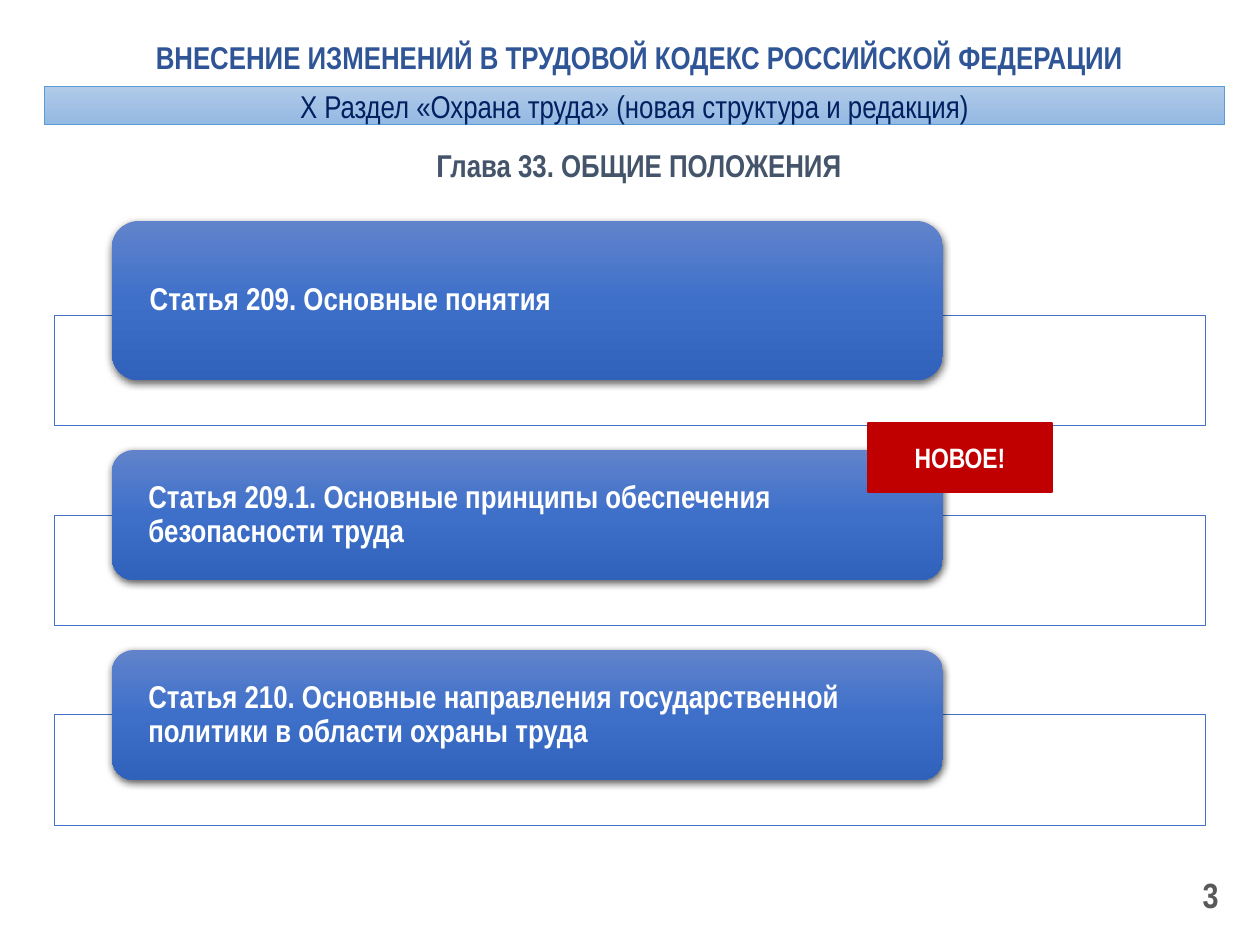
"""Builds the slide on chapter 33 of the labour code."""
from copy import deepcopy
from dataclasses import dataclass
from typing import NamedTuple, Optional

from lxml.etree import SubElement
from pptx import Presentation
from pptx.dml.color import RGBColor
from pptx.enum.shapes import MSO_SHAPE
from pptx.enum.text import MSO_ANCHOR, PP_ALIGN
from pptx.oxml.ns import qn
from pptx.util import Emu, Pt

EMU_PER_PX = 914400 / 126


@dataclass(frozen=True)
class Theme:
    font: str = "Arial Narrow"
    body_size: int = 18
    badge_size: int = 16
    number_size: int = 20
    title: str = "2F5597"
    chapter: str = "44546A"
    banner_text: str = "002060"
    banner_line: str = "5B9BD5"
    banner_fill: tuple = ("B1CBE9", "A3C1E5", "93B9E4")
    card_fill: tuple = ("6183CB", "3E70CA", "3062BB")
    frame_line: str = "4472C4"
    badge: str = "C00000"
    white: str = "FFFFFF"
    number: str = "595959"
    shadow: str = "000000"


THEME = Theme()


class Box(NamedTuple):
    left: int
    top: int
    width: int
    height: int


@dataclass(frozen=True)
class Label:
    text: str
    color: str
    size: int = THEME.body_size
    bold: bool = True
    align: PP_ALIGN = PP_ALIGN.CENTER


@dataclass(frozen=True)
class Article:
    text: str
    height: int


ARTICLES = (
    Article("Статья 209. Основные понятия", 159),
    Article("Статья 209.1. Основные принципы обеспечения безопасности труда", 130),
    Article("Статья 210. Основные направления государственной политики в области охраны труда", 130),
)
FIRST_CARD_BOTTOM = 380
ARTICLE_PITCH = 200
FRAME_OVERLAP = 65


def px(length: int) -> Emu:
    """Turn pixels into EMU."""
    return Emu(round(length * EMU_PER_PX))


def write(shape, label: Label) -> None:
    """Set and format the text of a shape."""
    frame = shape.text_frame
    frame.text = label.text
    frame.word_wrap = True
    frame.vertical_anchor = MSO_ANCHOR.MIDDLE
    paragraph = frame.paragraphs[0]
    paragraph.alignment = label.align
    font = paragraph.runs[0].font
    font.name = THEME.font
    font.size = Pt(label.size)
    font.bold = label.bold
    font.color.rgb = RGBColor.from_string(label.color)


def add_text(slide, box: Box, label: Label) -> None:
    """Add a text box with one line of text."""
    write(slide.shapes.add_textbox(*map(px, box)), label)


def add_panel(slide, kind: MSO_SHAPE, box: Box, fill: Optional[str] = None,
              line: Optional[str] = None, line_width: float = 0.5):
    """Add a preset shape with an optional solid fill and outline."""
    panel = slide.shapes.add_shape(kind, *map(px, box))
    panel.shadow.inherit = False
    if fill:
        panel.fill.solid()
        panel.fill.fore_color.rgb = RGBColor.from_string(fill)
    else:
        panel.fill.background()
    if line:
        panel.line.color.rgb = RGBColor.from_string(line)
        panel.line.width = Pt(line_width)
    else:
        panel.line.fill.background()
    return panel


def shade(panel, colors: tuple) -> None:
    """Fill a panel with a three-colour gradient from top to bottom."""
    panel.fill.gradient()
    panel.fill.gradient_angle = 270
    stop_list = panel.element.spPr.find(qn("a:gradFill")).find(qn("a:gsLst"))
    stop_list.append(deepcopy(stop_list[0]))
    for index, (stop, color) in enumerate(zip(panel.fill.gradient_stops, colors)):
        stop.position = index / 2
        stop.color.rgb = RGBColor.from_string(color)


def set_alpha(color_element, percent: int) -> None:
    """Give a colour element its opacity."""
    SubElement(color_element, qn("a:alpha"), val=str(percent * 1000))


def cast_shadow(panel) -> None:
    """Add a soft shadow below a panel."""
    effects = panel.element.spPr.find(qn("a:effectLst"))
    outer = SubElement(effects, qn("a:outerShdw"), blurRad=str(Pt(4.5)),
                       dist=str(Pt(1.5)), dir="5400000", algn="ctr", rotWithShape="0")
    set_alpha(SubElement(outer, qn("a:srgbClr"), val=THEME.shadow), 63)


def add_article(slide, article: Article, bottom: int) -> None:
    """Add an article card on top of its outlined frame."""
    frame = add_panel(slide, MSO_SHAPE.RECTANGLE,
                      Box(54, bottom - FRAME_OVERLAP, 1151, 111),
                      THEME.white, THEME.frame_line)
    set_alpha(frame.element.spPr.find(qn("a:solidFill"))[0], 90)
    card = add_panel(slide, MSO_SHAPE.ROUNDED_RECTANGLE,
                     Box(112, bottom - article.height, 831, article.height))
    shade(card, THEME.card_fill)
    cast_shadow(card)
    write(card, Label(article.text, THEME.white, align=PP_ALIGN.LEFT))
    text = card.text_frame
    text.margin_left = text.margin_right = px(30)
    text.margin_top = text.margin_bottom = 0
    text.paragraphs[0].line_spacing = 0.9


def main() -> None:
    """Build and save the slide."""
    presentation = Presentation()
    presentation.slide_width, presentation.slide_height = px(1260), px(945)
    slide = presentation.slides.add_slide(presentation.slide_layouts[6])

    chapter = add_panel(slide, MSO_SHAPE.ROUNDED_RECTANGLE, Box(113, 135, 1052, 59))
    write(chapter, Label("Глава 33. ОБЩИЕ ПОЛОЖЕНИЯ", THEME.chapter))

    for index, article in enumerate(ARTICLES):
        add_article(slide, article, FIRST_CARD_BOTTOM + index * ARTICLE_PITCH)

    add_text(slide, Box(104, 17, 1071, 79),
             Label("ВНЕСЕНИЕ ИЗМЕНЕНИЙ В ТРУДОВОЙ КОДЕКС РОССИЙСКОЙ ФЕДЕРАЦИИ", THEME.title))
    badge = add_panel(slide, MSO_SHAPE.RECTANGLE, Box(868, 423, 184, 69),
                      THEME.badge, THEME.badge, 1)
    write(badge, Label("НОВОЕ!", THEME.white, THEME.badge_size))
    banner = add_panel(slide, MSO_SHAPE.RECTANGLE, Box(44, 86, 1181, 39),
                       line=THEME.banner_line)
    shade(banner, THEME.banner_fill)
    write(banner, Label("Х Раздел «Охрана труда» (новая структура и редакция)",
                        THEME.banner_text, bold=False))
    add_text(slide, Box(937, 870, 294, 50),
             Label("3", THEME.number, THEME.number_size, align=PP_ALIGN.RIGHT))

    presentation.save("out.pptx")


if __name__ == "__main__":
    main()
